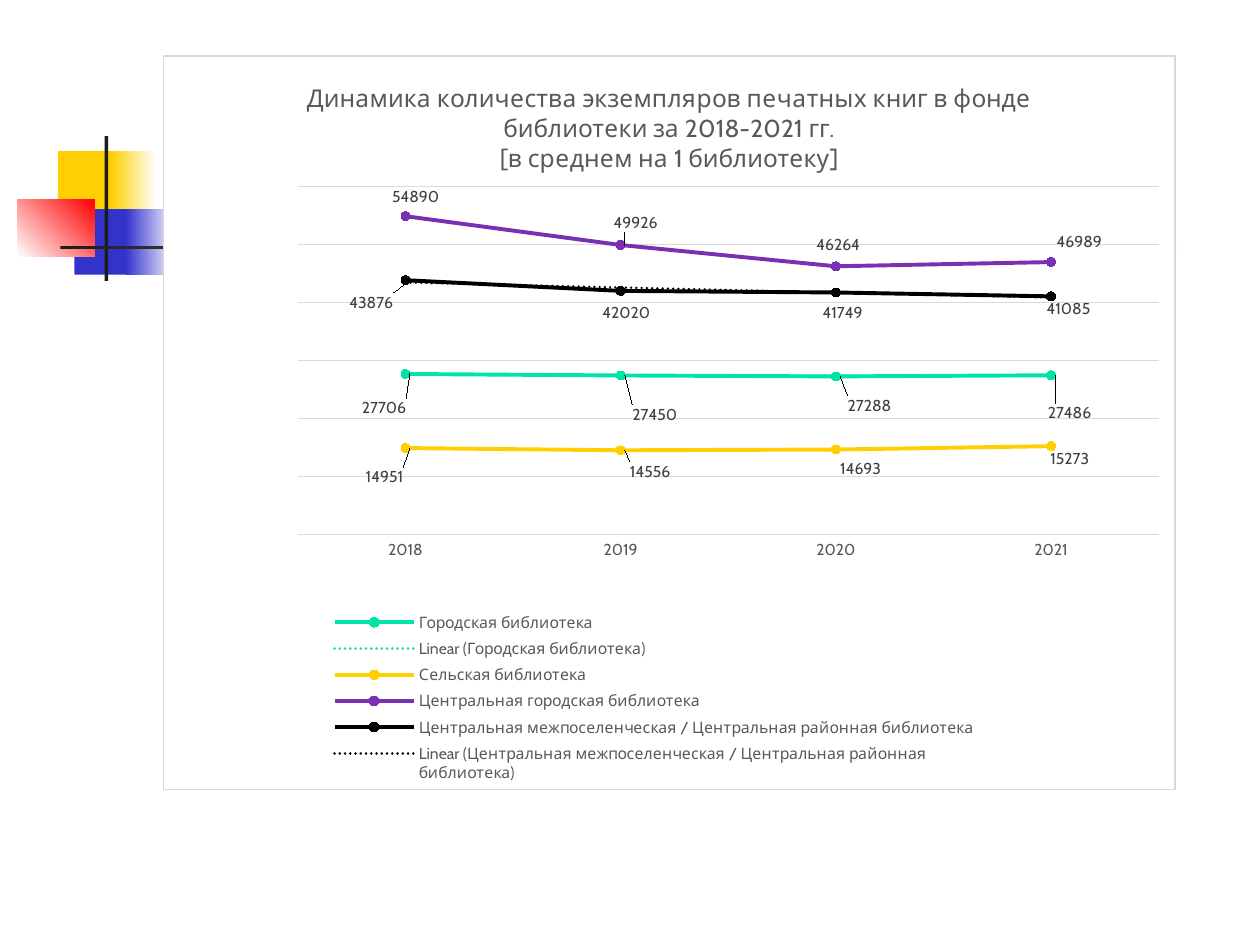
from lxml.etree import SubElement
from pptx import Presentation
from pptx.chart.data import CategoryChartData
from pptx.dml.color import RGBColor
from pptx.enum.chart import (XL_CHART_TYPE, XL_LABEL_POSITION, XL_LEGEND_POSITION,
                             XL_MARKER_STYLE, XL_TICK_MARK)
from pptx.enum.shapes import MSO_SHAPE
from pptx.oxml import parse_xml
from pptx.oxml.ns import nsdecls, qn
from pptx.util import Inches, Pt

WHITE = RGBColor(0xFF, 0xFF, 0xFF)
BLACK = RGBColor(0, 0, 0)
INK = RGBColor(0x1C, 0x1C, 0x1C)
GOLD = RGBColor(0xFF, 0xCF, 0x01)
BLUE = RGBColor(0x33, 0x33, 0xCC)
RED = RGBColor(0xFF, 0, 0)
MINT = RGBColor(0x00, 0xE4, 0xA8)
PURPLE = RGBColor(0x7A, 0x30, 0xB2)
GRAY = RGBColor(0x59, 0x59, 0x59)
DARK = RGBColor(0x40, 0x40, 0x40)
PALE = RGBColor(0xD9, 0xD9, 0xD9)
FONT = "Cabin"
YEARS = ["2018", "2019", "2020", "2021"]
TITLE = ["Динамика количества экземпляров печатных книг в фонде библиотеки за 2018-2021 гг.",
         "[в среднем на 1 библиотеку]"]
LABEL_MID = 0.23

SERIES = [
    ("Городская библиотека", MINT, True, [27706, 27450, 27288, 27486],
     [(-0.19, 0.27), (0.25, 0.31), (0.25, 0.23), (0.13, 0.3)]),
    ("Сельская библиотека", GOLD, False, [14951, 14556, 14693, 15273],
     [(-0.16, 0.23), (0.23, 0.17), (0.19, 0.15), (0.15, 0.1)]),
    ("Центральная городская библиотека", PURPLE, False, [54890, 49926, 46264, 46989],
     [(0.05, -0.16), (0.1, -0.18), (0, -0.17), (0.2, -0.16)]),
    ("Центральная межпоселенческая / Центральная районная библиотека", BLACK, True,
     [43876, 42020, 41749, 41085],
     [(-0.29, 0.18), (0.01, 0.17), (0.05, 0.16), (0.12, 0.1)]),
]


def style(font, size, color):
    font.name = FONT
    font.size = Pt(size)
    font.bold = False
    font.color.rgb = color


def stroke(line, color, width):
    line.color.rgb = color
    line.width = Pt(width)


def layout(owner, index, **parts):
    old = owner.find(qn("c:layout"))
    if old is not None:
        owner.remove(old)
    node = parse_xml(f"<c:layout {nsdecls('c')}><c:manualLayout/></c:layout>")
    for tag, value in parts.items():
        SubElement(node[0], qn(f"c:{tag}")).set("val", str(value))
    owner.insert(index, node)


def add_trend(series, name, color):
    node = parse_xml(
        f"<c:trendline {nsdecls('c', 'a')}><c:name>Linear ({name})</c:name>"
        f'<c:spPr><a:ln w="{Pt(1.5)}" cap="rnd"><a:solidFill><a:srgbClr val="{color}"/>'
        '</a:solidFill><a:prstDash val="sysDot"/></a:ln></c:spPr>'
        '<c:trendlineType val="linear"/><c:dispRSqr val="0"/><c:dispEq val="0"/>'
        "</c:trendline>")
    series.find(qn("c:cat")).addprevious(node)


def add_block(slide, box, start, end=None, angle=0):
    block = slide.shapes.add_shape(MSO_SHAPE.RECTANGLE, *map(Inches, box))
    block.shadow.inherit = False
    block.line.fill.background()
    if end is None:
        block.fill.solid()
        block.fill.fore_color.rgb = start
        return
    block.fill.gradient()
    block.fill.gradient_angle = angle
    for stop, color in zip(block.fill.gradient_stops, (start, end)):
        stop.color.rgb = color


def add_decor(slide, left, top):
    for x, y, w, h, *paint in [
        (0.32, 0.12, 0.48, 0.52, GOLD),
        (0.74, 0.12, 0.36, 0.52, GOLD, WHITE),
        (0.45, 0.58, 0.46, 0.52, BLUE),
        (0.86, 0.58, 0.4, 0.52, BLUE, WHITE),
        (0, 0.5, 0.61, 0.46, WHITE, RED, 45),
        (0.69, 0, 0.03, 1.15, INK),
        (0.34, 0.87, 9, 0.03, INK, WHITE),
    ]:
        add_block(slide, (left + x, top + y, w, h), *paint)


def style_series(series, row, width, height):
    name, color, trend, _, shifts = row
    series.smooth = False
    stroke(series.format.line, color, 2.25)
    series.marker.style = XL_MARKER_STYLE.CIRCLE
    series.marker.size = 5
    series.marker.format.fill.solid()
    series.marker.format.fill.fore_color.rgb = color
    stroke(series.marker.format.line, color, 0.75)
    for index in range(len(shifts)):
        label = series.points[index].data_label
        style(label.font, 9, DARK)
        label.position = XL_LABEL_POSITION.RIGHT
    node = series._element
    for label, (x, y) in zip(node.iter(qn("c:dLbl")), shifts):
        layout(label, 1, x=(x - LABEL_MID) / width, y=y / height)
    if trend:
        add_trend(node, name, color)


def style_axes(chart):
    axis = chart.category_axis
    axis.major_tick_mark = XL_TICK_MARK.NONE
    stroke(axis.format.line, PALE, 0.75)
    style(axis.tick_labels.font, 9, GRAY)
    scale = chart.value_axis
    scale.visible = False
    scale.minimum_scale, scale.maximum_scale, scale.major_unit = 0, 60000, 10000
    scale.has_major_gridlines = True
    stroke(scale.major_gridlines.format.line, PALE, 0.75)


def add_graph(slide, left, top, width, height):
    data = CategoryChartData()
    data.categories = YEARS
    for name, _, _, values, _ in SERIES:
        data.add_series(name, values)
    chart = slide.shapes.add_chart(XL_CHART_TYPE.LINE_MARKERS,
                                   *map(Inches, (left, top, width, height)), data).chart
    style(chart.font, 10, BLACK)
    chart.plots[0].vary_by_categories = False
    style_axes(chart)

    chart.has_title = True
    frame = chart.chart_title.text_frame
    frame.text = "\n".join(TITLE)
    for line in frame.paragraphs:
        style(line.runs[0].font, 14, GRAY)
    chart.chart_title.include_in_layout = False

    chart.has_legend = True
    chart.legend.position = XL_LEGEND_POSITION.BOTTOM
    chart.legend.include_in_layout = False
    style(chart.legend.font, 9, GRAY)

    for series, row in zip(chart.plots[0].series, SERIES):
        style_series(series, row, width, height)

    root = chart.element
    layout(next(root.iter(qn("c:plotArea"))), 0, layoutTarget="inner", xMode="edge",
           yMode="edge", x=0.133, y=0.178, w=0.851, h=0.475)
    layout(next(root.iter(qn("c:legend"))), 1, xMode="edge", yMode="edge",
           x=0.16, y=0.75, w=0.65, h=0.25)
    root.find(qn("c:chart")).addnext(parse_xml(
        f'<c:spPr {nsdecls("c", "a")}><a:solidFill><a:srgbClr val="{WHITE}"/></a:solidFill>'
        f'<a:ln w="{Pt(0.75)}"><a:solidFill><a:srgbClr val="{PALE}"/></a:solidFill></a:ln>'
        "</c:spPr>"))


def main():
    deck = Presentation()
    deck.slide_width, deck.slide_height = Inches(10), Inches(7.5)
    slide = deck.slides.add_slide(deck.slide_layouts[6])
    add_decor(slide, 0.14, 1.08)
    add_graph(slide, 1.29, 0.44, 8.04, 5.83)
    deck.save("out.pptx")


if __name__ == "__main__":
    main()
